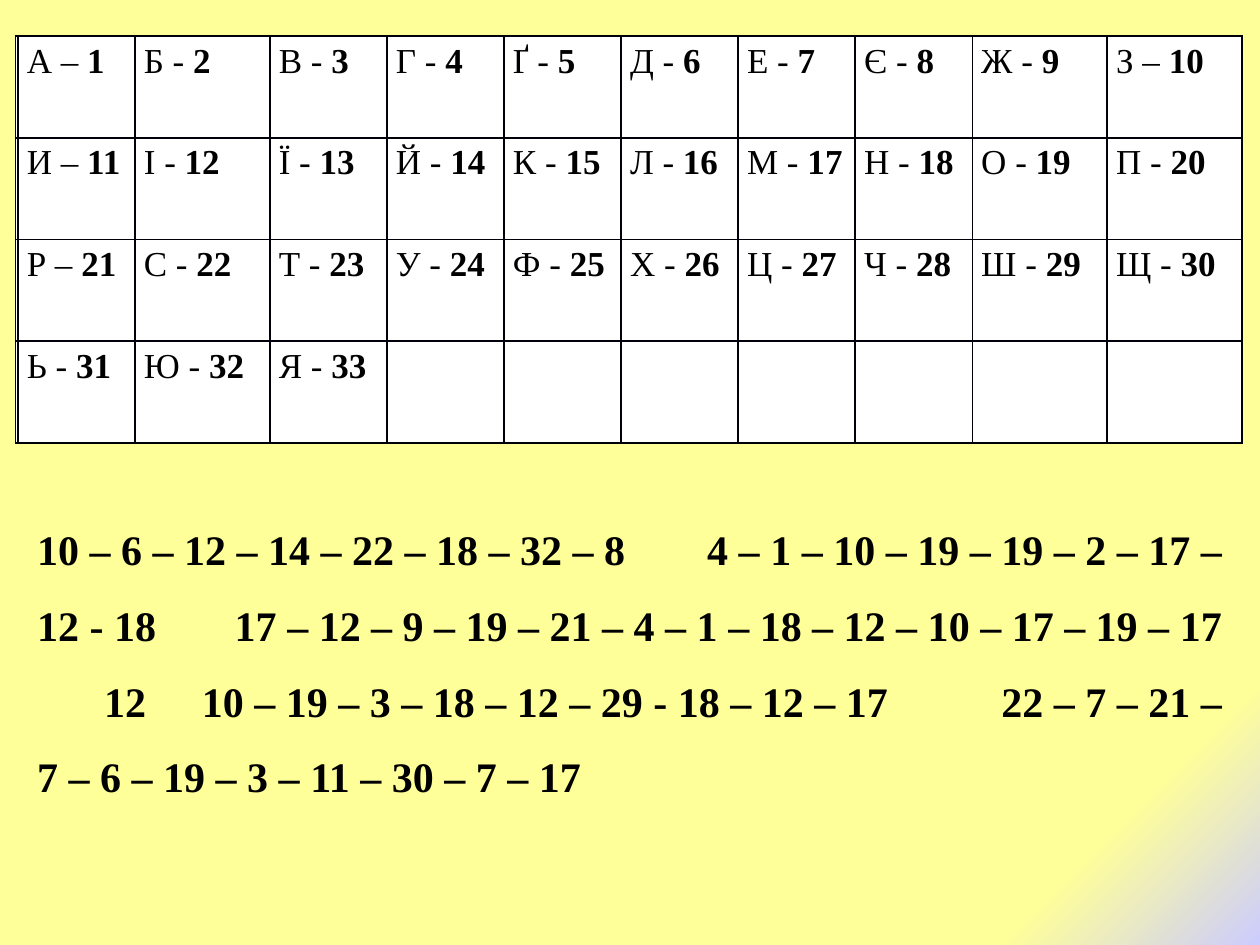
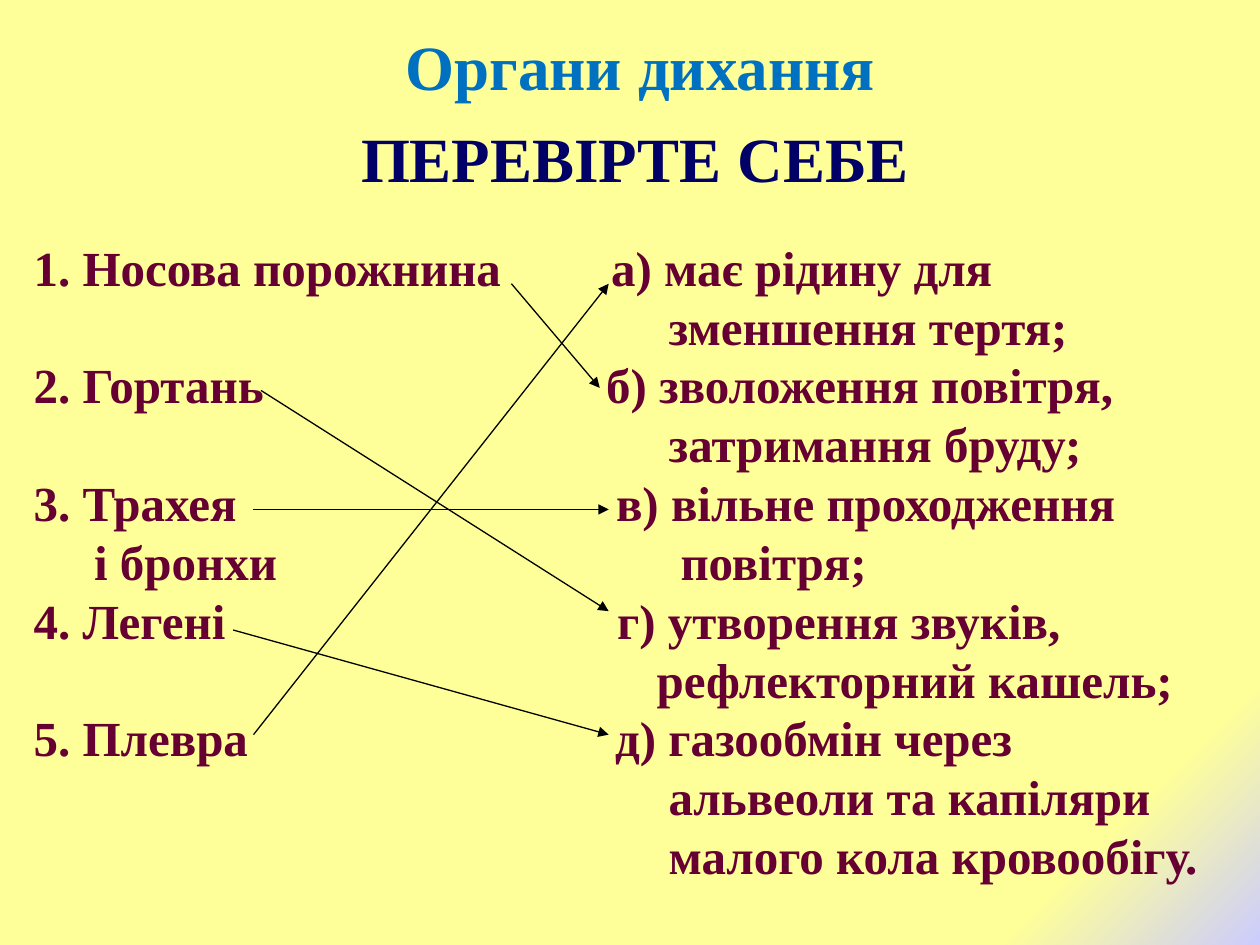
from lxml import etree
from pptx import Presentation
from pptx.dml.color import RGBColor
from pptx.enum.shapes import MSO_CONNECTOR
from pptx.enum.text import MSO_ANCHOR, PP_ALIGN
from pptx.oxml.ns import qn
from pptx.util import Cm, Pt

LEFT, MID, JUST = PP_ALIGN.LEFT, PP_ALIGN.CENTER, PP_ALIGN.JUSTIFY
TOP, CENTER = MSO_ANCHOR.TOP, MSO_ANCHOR.MIDDLE
STRAIGHT = MSO_CONNECTOR.STRAIGHT

FONT = "Times New Roman"
BLACK, WHITE, EDGE = "000000", "FFFFFF", "00000A"
CREAM, LILAC = "FFFF99", "CCCCFF"
BLUE, NAVY, WINE = "0070C0", "000066", "660033"

LETTERS = "АБВГҐДЕЄЖЗИІЇЙКЛМНОПРСТУФХЦЧШЩЬЮЯ"
LONG_DASH = "АЗИР"
NARROW, WIDE, ROW = 2.36, 2.72, 2.05
WIDTHS = [NARROW, WIDE] + [NARROW] * 6 + [WIDE] * 2

# Each line: text and its tab stops as (cm, alignment)
END = (23.88, "r")
CIPHER = [
    ("10 – 6 – 12 – 14 – 22 – 18 – 32 – 8\t4 – 1 – 10 – 19 – 19 – 2 – 17 –", [END]),
    ("12 - 18\t17 – 12 – 9 – 19 – 21 – 4 – 1 – 18 – 12 – 10 – 17 – 19 – 17", [END]),
    ("\t12\t10 – 19 – 3 – 18 – 12 – 29 - 18 – 12 – 17\t22 – 7 – 21 –",
     [(1.35, "l"), (3.32, "l"), END]),
    ("7 – 6 – 19 – 3 – 11 – 30 – 7 – 17", []),
]

INNER = (12.8, "l")
MATCH = [
    ("1. Носова порожнина\tа) має рідину для", [(11.64, "l")]),
    ("\tзменшення тертя;", [INNER]),
    ("2. Гортань\tб) зволоження повітря,", [(11.54, "l")]),
    ("\tзатримання бруду;", [INNER]),
    ("3. Трахея\tв) вільне проходження", [(11.74, "l")]),
    ("\tі бронхи\tповітря;", [(1.22, "l"), (13.04, "l")]),
    ("4. Легені\tг) утворення звуків,", [(11.76, "l")]),
    ("\tрефлекторний кашель;", [(12.56, "l")]),
    ("5. Плевра\tд) газообмін через", [(11.72, "l")]),
    ("\tальвеоли та капіляри", [INNER]),
    ("\tмалого кола кровообігу.", [INNER]),
]

ARROWS = [
    (10.31, 5.72, 12.09, 7.82),
    (5.26, 7.87, 12.27, 12.32),
    (5.11, 10.27, 12.27, 10.27),
    (4.7, 12.7, 12.27, 14.81),
    (5.11, 14.81, 12.27, 5.72),
]


def rgb(code):
    return RGBColor.from_string(code)


def add_tag(parent, tag, **attrs):
    return etree.SubElement(parent, qn(tag), attrs)


class Deck:
    def __init__(self):
        self.prs = Presentation()
        self.prs.slide_width, self.prs.slide_height = Cm(25.4), Cm(19.05)
        self.slide = None
        fill = self.prs.slide_master.background.fill
        fill.gradient()
        fill.gradient_angle = 315
        for stop, place, code in zip(fill.gradient_stops, (0.88, 1), (CREAM, LILAC)):
            stop.position, stop.color.rgb = place, rgb(code)

    def new_slide(self):
        self.slide = self.prs.slides.add_slide(self.prs.slide_layouts[6])

    def style(self, para, size, color, bold=None, align=LEFT, space=1.0):
        font = para.font
        font.name, font.size, font.bold = FONT, Pt(size), bold
        font.color.rgb = rgb(color)
        para.alignment, para.line_spacing = align, space

    def text(self, box, lines, size, color, align=LEFT, space=1.0, anchor=TOP):
        """Place bold lines, given as (text, tab stops), in a box in cm."""
        frame = self.slide.shapes.add_textbox(*map(Cm, box)).text_frame
        frame.word_wrap, frame.vertical_anchor = True, anchor
        for i, (line, stops) in enumerate(lines):
            para = frame.add_paragraph() if i else frame.paragraphs[0]
            para.add_run().text = line
            if stops:
                tabs = etree.Element(qn("a:tabLst"))
                for pos, kind in stops:
                    add_tag(tabs, "a:tab", pos=str(Cm(pos)), algn=kind)
                para._p.get_or_add_pPr().insert(0, tabs)
            self.style(para, size, color, True, align, space)

    def border(self, cell):
        props = cell._tc.get_or_add_tcPr()
        for side in "LRTB":
            line = add_tag(props, "a:ln" + side, w=str(Pt(1)))
            add_tag(add_tag(line, "a:solidFill"), "a:srgbClr", val=EDGE)

    def key(self, left, top, rows):
        """Draw the table that gives each letter its number."""
        table = self.slide.shapes.add_table(
            rows, len(WIDTHS), Cm(left), Cm(top), Cm(sum(WIDTHS)), Cm(ROW * rows)).table
        table.first_row = table.horz_banding = False
        for col, width in zip(table.columns, WIDTHS):
            col.width = Cm(width)
        for row in table.rows:
            row.height = Cm(ROW)
        for i, cell in enumerate(table.iter_cells()):
            self.border(cell)
            cell.fill.solid()
            cell.fill.fore_color.rgb = rgb(WHITE)
            cell.margin_left = cell.margin_right = Cm(0.18)
            cell.margin_top = cell.margin_bottom = 0
            para = cell.text_frame.paragraphs[0]
            self.style(para, 20, BLACK, align=JUST, space=1.15)
            if i < len(LETTERS):
                dash = "–" if LETTERS[i] in LONG_DASH else "-"
                para.add_run().text = f"{LETTERS[i]} {dash} "
                num = para.add_run()
                num.text, num.font.bold = str(i + 1), True

    def arrow(self, *ends):
        line = self.slide.shapes.add_connector(STRAIGHT, *map(Cm, ends))
        line.line.width = Pt(0.75)
        line.line.color.rgb = rgb(BLACK)
        add_tag(line.line._get_or_add_ln(), "a:tailEnd", type="triangle")
        add_tag(line._element.spPr, "a:effectLst")


def main():
    deck = Deck()

    # Two layers, slightly apart, make the heavy left edge
    deck.new_slide()
    for left in (0.31, 0.36):
        deck.key(left, 0.73, 4)
    deck.text((0.5, 9.93, 24.4, 6.4), CIPHER, 24, BLACK, space=1.5)

    deck.new_slide()
    deck.text((1.9, 0.43, 22.02, 1.7), [("Органи дихання", [])], 36, BLUE, MID)
    deck.text((0.64, 2.54, 24.33, 1.27), [("ПЕРЕВІРТЕ СЕБЕ", [])], 36, NAVY, MID,
              anchor=CENTER)
    deck.text((0.43, 4.66, 24.33, 13.31), MATCH, 28, WINE)
    for ends in ARROWS:
        deck.arrow(*ends)

    deck.prs.save("out.pptx")


if __name__ == "__main__":
    main()
